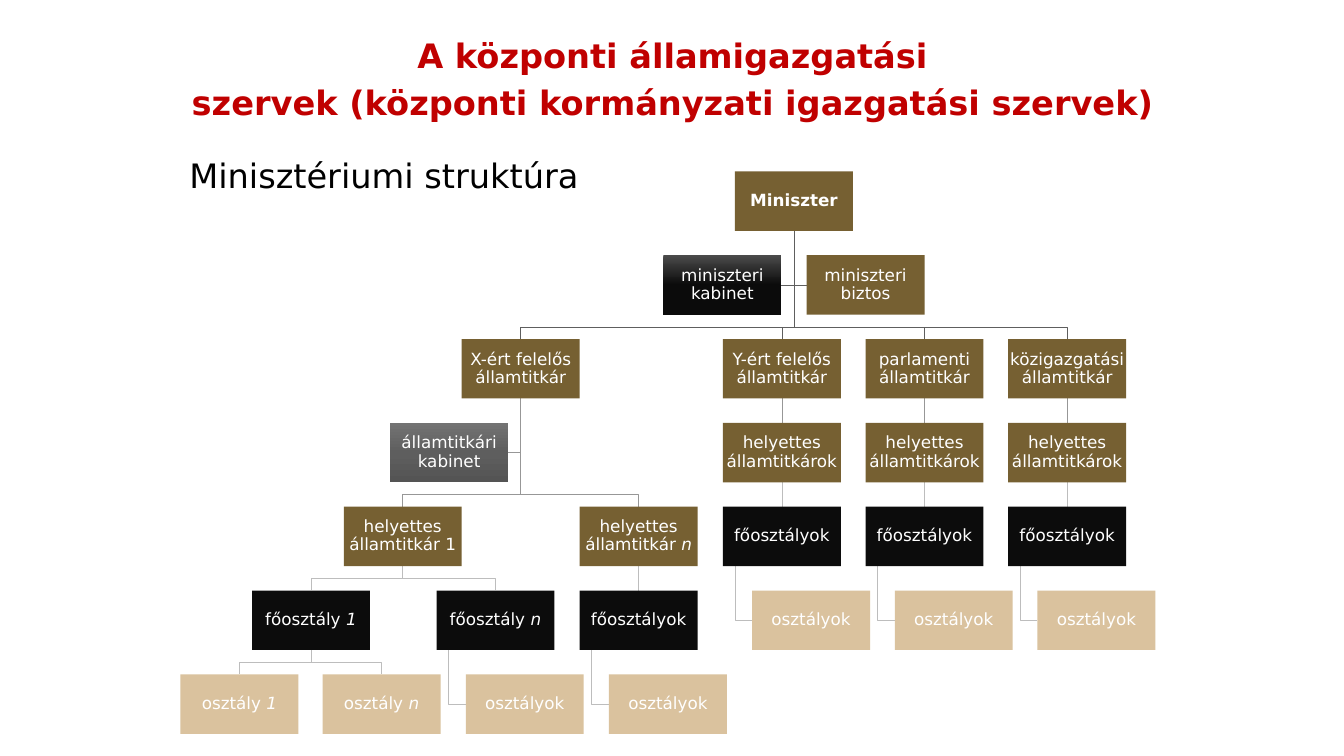
from copy import deepcopy
from dataclasses import dataclass

from pptx import Presentation
from pptx.dml.color import RGBColor
from pptx.enum.shapes import MSO_CONNECTOR, MSO_SHAPE
from pptx.enum.text import MSO_ANCHOR, MSO_AUTO_SIZE, PP_ALIGN
from pptx.oxml.ns import qn
from pptx.oxml.xmlchemy import OxmlElement
from pptx.util import Inches, Pt

RECTANGLE = MSO_SHAPE.RECTANGLE
STRAIGHT = MSO_CONNECTOR.STRAIGHT
MIDDLE, TOP = MSO_ANCHOR.MIDDLE, MSO_ANCHOR.TOP
CENTER, LEFT = PP_ALIGN.CENTER, PP_ALIGN.LEFT
GROW = MSO_AUTO_SIZE.SHAPE_TO_FIT_TEXT

BOX_WIDTH, BOX_HEIGHT = 1.17, 0.59
FIRST_TOP, ROW_PITCH = 1.7, 4.99 / 6
BRANCH_LEFT, BRANCH_PITCH = 7.17, 2.83 / 2
HANG_INSET, HANG_INDENT = 0.12, 0.29


@dataclass(frozen=True)
class Theme:
    """Colours, font and type sizes of the slide."""
    font: str = "DejaVu Sans"
    heading_size: int = 24
    box_size: int = 12
    title: str = "C00000"
    body: str = "000000"
    box_text: str = "FFFFFF"
    leader: str = "766032"
    department: str = "0C0C0C"
    unit: str = "DAC29E"
    minister_cabinet: tuple = ("4B4B4B", "0B0B0B", "0A0A0A")
    secretary_cabinet: tuple = ("737373", "5E5E5E", "545454")
    links: tuple = ("5E5E5E", "5E5E5E", "979797", "BDBDBD", "BDBDBD", "BDBDBD")


@dataclass(frozen=True)
class Node:
    """One unit of the organisation chart; text after a bar is italic."""
    row: int
    left: float
    label: str
    fill: object
    parent: object = None
    link: str = "tree"
    bold: bool = False

    @property
    def top(self):
        """Top edge given by the row."""
        return FIRST_TOP + self.row * ROW_PITCH

    @property
    def bottom(self):
        """Bottom edge."""
        return self.top + BOX_HEIGHT

    @property
    def center(self):
        """Horizontal centre."""
        return self.left + BOX_WIDTH / 2

    @property
    def middle(self):
        """Vertical centre."""
        return self.top + BOX_HEIGHT / 2


class ChartSlide:
    """Holds the theme and the current slide and draws its elements."""

    def __init__(self, page, theme):
        """Keep the page and the theme."""
        self.page, self.theme = page, theme

    def label(self, frame, label, size, color, align, spacing=None, bold=False):
        """Set one paragraph, with line breaks and an italic tail after a bar."""
        para = frame.paragraphs[0]
        para.alignment = align
        para.line_spacing = spacing
        for part, text in enumerate(label.split("|")):
            formats = {"name": self.theme.font, "size": Pt(size),
                       "bold": bold, "italic": part > 0}
            for number, line in enumerate(text.split("\n")):
                if number:
                    para.add_line_break()
                span = para.add_run()
                span.text = line
                span.font.color.rgb = RGBColor.from_string(color)
                for name, value in formats.items():
                    setattr(span.font, name, value)

    def heading(self, bounds, label, color, frame_formats, **formats):
        """Add a large line of text."""
        box = self.page.shapes.add_textbox(*map(Inches, bounds))
        for name, value in frame_formats.items():
            setattr(box.text_frame, name, value)
        self.label(box.text_frame, label, self.theme.heading_size, color, **formats)

    def box(self, node):
        """Add the box of one unit."""
        bounds = (node.left, node.top, BOX_WIDTH, BOX_HEIGHT)
        box = self.page.shapes.add_shape(RECTANGLE, *map(Inches, bounds))
        box.shadow.inherit = False
        box.line.fill.background()
        if isinstance(node.fill, tuple):
            self.shade(box, node.fill)
        else:
            box.fill.solid()
            box.fill.fore_color.rgb = RGBColor.from_string(node.fill)
        frame = box.text_frame
        formats = {"word_wrap": True, "vertical_anchor": MIDDLE}
        formats.update({f"margin_{side}": Inches(0.01)
                        for side in ("left", "right", "top", "bottom")})
        for name, value in formats.items():
            setattr(frame, name, value)
        self.label(frame, node.label, self.theme.box_size, self.theme.box_text,
                   CENTER, 0.9, node.bold)

    def shade(self, box, colors):
        """Fill a box with a downward three-colour gradient."""
        box.fill.gradient()
        box.fill.gradient_angle = 270
        stops = box.element.spPr.find(".//" + qn("a:gsLst"))
        stops.append(deepcopy(stops[-1]))
        for number, stop in enumerate(box.fill.gradient_stops):
            stop.position = number / 2
            stop.color.rgb = RGBColor.from_string(colors[number])

    def link(self, node):
        """Join a unit to its parent."""
        parent = node.parent
        start = (parent.center, parent.bottom)
        if node.link == "side":
            edge = node.left + (BOX_WIDTH if node.left < parent.left else 0)
            points = [start, (parent.center, node.middle), (edge, node.middle)]
        elif node.link == "hang":
            trunk = parent.left + HANG_INSET
            points = [(trunk, parent.bottom), (trunk, node.middle),
                      (node.left, node.middle)]
        elif node.left == parent.left:
            points = [start, (node.center, node.top)]
        else:
            bend = node.top - HANG_INSET
            points = [start, (parent.center, bend), (node.center, bend),
                      (node.center, node.top)]
        places = [(Inches(x), Inches(y)) for x, y in points]
        if len(places) == 2:
            line = self.page.shapes.add_connector(STRAIGHT, *places[0], *places[1])
            line.element.spPr.append(OxmlElement("a:effectLst"))
        else:
            outline = self.page.shapes.build_freeform(*places[0])
            outline.add_line_segments(places[1:], close=False)
            line = outline.convert_to_shape()
            line.fill.background()
            line.shadow.inherit = False
        line.line.color.rgb = RGBColor.from_string(self.theme.links[parent.row])
        line.line.width = Pt(0.5)


def ministry(theme):
    """List the units of the ministry."""
    gold, black, sand = theme.leader, theme.department, theme.unit
    minister = Node(0, 7.29, "Miniszter", gold, bold=True)
    secretary = Node(2, 4.58, "X-ért felelős államtitkár", gold, minister)
    first = Node(4, 3.41, "helyettes államtitkár 1", gold, secretary)
    last = Node(4, 5.75, "helyettes államtitkár |n", gold, secretary)
    first_department = Node(5, 2.5, "főosztály |1", black, first)
    last_department = Node(5, 4.33, "főosztály |n", black, first)
    departments = Node(5, last.left, "főosztályok", black, last)
    nodes = [
        minister, secretary, first, last,
        first_department, last_department, departments,
        Node(1, 6.58, "miniszteri kabinet", theme.minister_cabinet, minister, "side"),
        Node(1, 8, "miniszteri biztos", gold, minister, "side"),
        Node(3, 3.87, "államtitkári kabinet", theme.secretary_cabinet, secretary, "side"),
        Node(6, 1.79, "osztály |1", sand, first_department),
        Node(6, 3.2, "osztály |n", sand, first_department),
    ]
    hanging = [last_department, departments]
    for number, role in enumerate(("Y-ért felelős", "parlamenti", "közigazgatási")):
        left = BRANCH_LEFT + number * BRANCH_PITCH
        head = Node(2, left, f"{role} államtitkár", gold, minister)
        deputies = Node(3, left, "helyettes államtitkárok", gold, head)
        branch = Node(4, left, "főosztályok", black, deputies)
        nodes += [head, deputies, branch]
        hanging.append(branch)
    return nodes + [Node(parent.row + 1, parent.left + HANG_INDENT, "osztályok",
                         sand, parent, "hang") for parent in hanging]


def main():
    """Build the deck and save it."""
    deck = Presentation()
    deck.slide_width, deck.slide_height = Inches(13.33), Inches(7.5)
    theme = Theme()
    chart = ChartSlide(deck.slides.add_slide(deck.slide_layouts[6]), theme)
    chart.heading((1.67, 0, 10, 1.49),
                  "A központi államigazgatási\n"
                  "szervek (központi kormányzati igazgatási szervek)",
                  theme.title, {"word_wrap": True, "vertical_anchor": MIDDLE},
                  align=CENTER, spacing=Pt(34), bold=True)
    nodes = ministry(theme)
    for node in nodes:
        if node.parent:
            chart.link(node)
    for node in nodes:
        chart.box(node)
    chart.heading((1.78, 1.49, 4.11, 0.5), "Minisztériumi struktúra", theme.body,
                  {"word_wrap": False, "vertical_anchor": TOP, "auto_size": GROW},
                  align=LEFT)
    deck.save("out.pptx")


if __name__ == "__main__":
    main()
